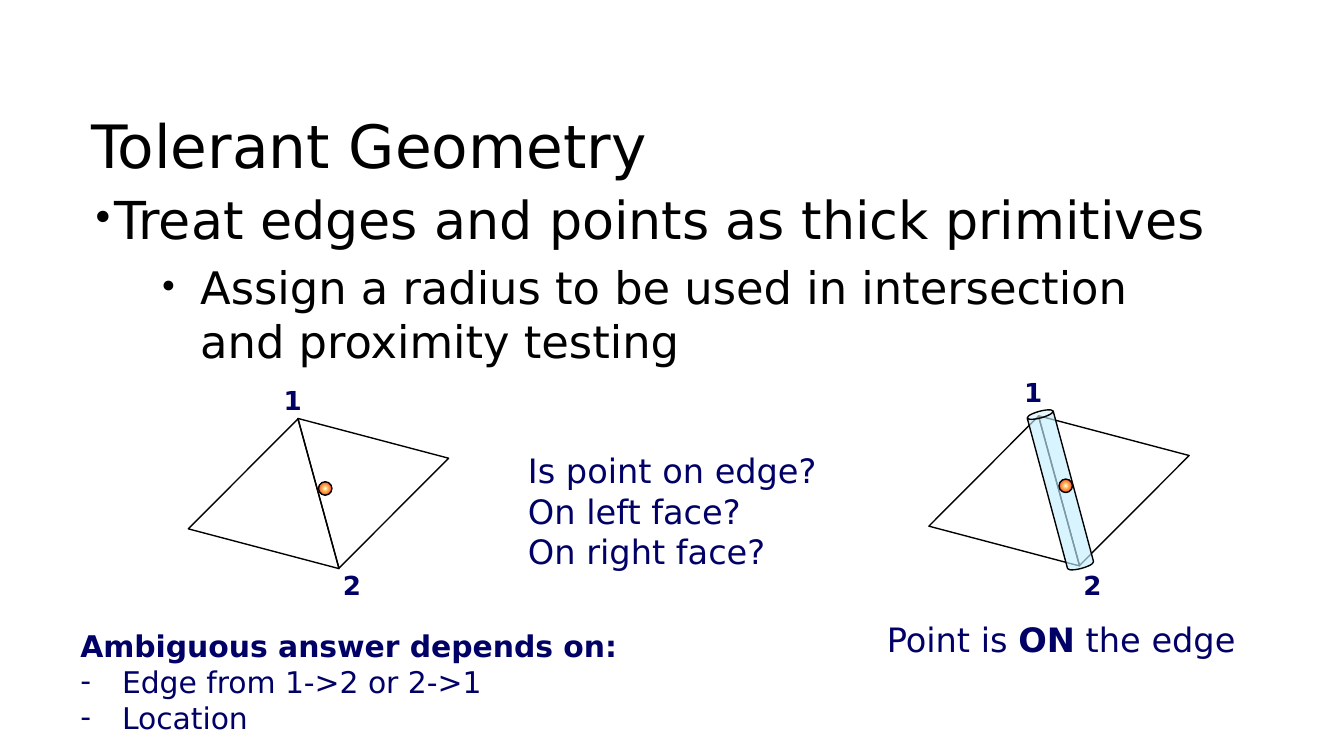
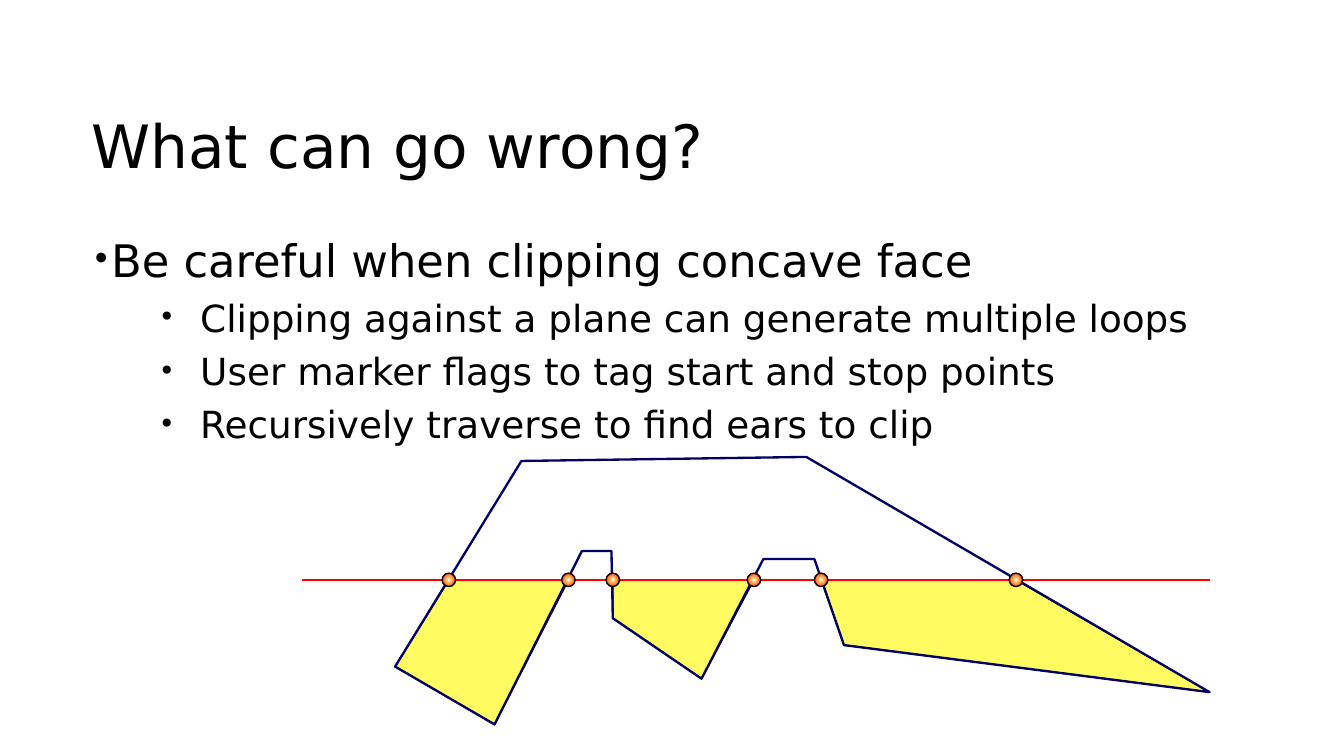
from lxml import etree
from pptx import Presentation, util as u
from pptx.dml import color
from pptx.enum import shapes, text
from pptx.oxml import ns

FONT = "DejaVu Sans"
BLACK, NAVY, RED, YELLOW, CYAN = "000000", "000066", "FF0000", "FFFB61", "C2F0FF"
COLUMNS, ROWS = 100, 56.25
TITLE_BOX = (5.8, 7.3, 88.3, 8.5)
DOT = 1.0


def cells(count):
    """Return the length of a number of grid cells, each a tenth of an inch."""
    return u.Inches(count / 10)


def hue(value):
    """Turn a hex string into a colour."""
    return color.RGBColor.from_string(value)


def add_xml(parent, tag, **attributes):
    """Append a drawing element with attributes to a parent."""
    child = etree.SubElement(parent, ns.qn(f"a:{tag}"))
    for name, value in attributes.items():
        child.set(name, str(value))
    return child


def style_font(target, size, tint, bold=None):
    """Format the font of a paragraph or span."""
    target.font.name = FONT
    target.font.size = u.Pt(size)
    target.font.color.rgb = hue(tint)
    target.font.bold = bold


def add_bullet(para, mark, margin, indent, tint=None, percent=None):
    """Give a paragraph a bullet and a hanging indent in grid cells."""
    props = para._p.get_or_add_pPr()
    props.set("marL", str(cells(margin)))
    props.set("indent", str(cells(indent)))
    if tint:
        add_xml(add_xml(props, "buClr"), "srgbClr", val=tint)
    if percent:
        add_xml(props, "buSzPct", val=percent * 1000)
    add_xml(props, "buFont", typeface=FONT)
    add_xml(props, "buChar", char=mark)


def place(shape, box):
    """Move a shape to a box given in grid cells."""
    shape.left, shape.top, shape.width, shape.height = map(cells, box)


def prepare_placeholder(shape, box):
    """Place a placeholder and return its text frame."""
    place(shape, box)
    frame = shape.text_frame
    frame.word_wrap = True
    frame.auto_size = text.MSO_AUTO_SIZE.NONE
    frame.vertical_anchor = text.MSO_ANCHOR.TOP
    frame.margin_left = frame.margin_right = cells(1)
    frame.margin_top = cells(0.8)
    return frame


def add_page(deck, title, body_box, lead_size, lead, points):
    """Add a page with a title and a two-level list."""
    page = deck.slides.add_slide(deck.slide_layouts[1])
    para = prepare_placeholder(page.shapes.title, TITLE_BOX).paragraphs[0]
    para.text = title
    para.alignment = text.PP_ALIGN.LEFT
    style_font(para, 32, BLACK)

    frame = prepare_placeholder(page.placeholders[1], body_box)
    for index, line in enumerate([lead, *points]):
        para = frame.add_paragraph() if index else frame.paragraphs[0]
        para.text = line
        size = lead_size - 4 if index else lead_size
        para.level = 1 if index else 0
        para.space_before = u.Pt(0.23 * size if index else 0)
        margin, indent = (8.1, -3.1) if index else (0, 0)
        add_bullet(para, "•", margin, indent, BLACK, 75)
        style_font(para, size, BLACK)
    return page


def add_note(parent, box, lines, size, bold=None, align=text.PP_ALIGN.LEFT):
    """Add a navy text box that does not wrap and return its paragraphs."""
    shape = parent.add_textbox(*map(cells, box))
    frame = shape.text_frame
    frame.word_wrap = False
    frame.auto_size = text.MSO_AUTO_SIZE.SHAPE_TO_FIT_TEXT
    for index, line in enumerate(lines):
        para = frame.add_paragraph() if index else frame.paragraphs[0]
        para.text = line
        para.alignment = align
        style_font(para, size, NAVY, bold)
    return frame.paragraphs


def outline_shape(shape, tint=BLACK, width=0, fill=None):
    """Set the line and fill of a shape and remove its shadow."""
    shape.shadow.inherit = False
    shape.line.color.rgb = hue(tint)
    shape.line.width = u.Pt(width)
    if fill:
        shape.fill.solid()
        shape.fill.fore_color.rgb = hue(fill)
    else:
        shape.fill.background()
    return shape


def add_figure(parent, kind, box, rotation=0, fill=None):
    """Add a thinly outlined preset shape."""
    shape = parent.add_shape(kind, *map(cells, box))
    shape.rotation = rotation
    return outline_shape(shape, fill=fill)


def add_dot(parent, left, top):
    """Add a glowing point marker."""
    dot = add_figure(parent, shapes.MSO_SHAPE.OVAL, (left, top, DOT, DOT))
    props = dot._element.spPr
    gradient = add_xml(props, "gradFill", rotWithShape=1)
    stops = add_xml(gradient, "gsLst")
    for position, tint in ((1, "FFFFFF"), (21, "FFCC66"), (100, RED)):
        stop = add_xml(stops, "gs", pos=position * 1000)
        add_xml(stop, "srgbClr", val=tint)
    focus = add_xml(gradient, "path", path="circle")
    add_xml(focus, "fillToRect", l=50000, t=50000, r=50000, b=50000)
    props.replace(props.find(ns.qn("a:noFill")), gradient)


def add_mesh(page, left, top, label_tops, thick=False):
    """Draw two faces that share an edge, with a point on that edge."""
    group = page.shapes.add_group_shape().shapes
    triangle = shapes.MSO_SHAPE.ISOSCELES_TRIANGLE
    add_figure(group, triangle, (left, top, 11.6, 10), 14.8)
    lower = add_figure(group, triangle, (left + 5.6, top + 1.45, 11.6, 10), 14.8)
    lower._element.spPr.xfrm.set("flipV", "1")
    for label, shift, label_top in zip("21", (9.35, 4.95), label_tops):
        box = (left + shift, label_top, 3.4, 3.4)
        add_note(group, box, [label], 14, True, text.PP_ALIGN.RIGHT)
    if thick:
        box = (left + 7.7, top - 0.4, 2, 12.1)
        tube = add_figure(group, shapes.MSO_SHAPE.CAN, box, 345, CYAN)
        tint = tube._element.spPr.find(f".//{ns.qn('a:srgbClr')}")
        add_xml(tint, "alpha", val=64000)
    add_dot(group, left + 8.6, top + 4.85)


def add_polygon(page, left, top, points, **style):
    """Draw a closed outline from points relative to a corner."""
    start, *rest = [(cells(left + x), cells(top + y)) for x, y in points]
    builder = page.shapes.build_freeform(*start)
    builder.add_line_segments(rest, close=True)
    return outline_shape(builder.convert_to_shape(), **style)


def add_clipping(page, left, top, width):
    """Draw a concave face cut by a line, with its ears filled."""
    cut = 9.15
    face = [(14.3, 19.9), (6.9, 15.6), (16.3, 0.3), (37.5, 0),
            (67.5, 17.5), (40.3, 14), (38.1, 7.6), (34.3, 7.6),
            (29.7, 16.5), (23.1, 12), (23, 7), (20.8, 7)]
    ears = [(10.9, 19.8), (38.6, 53.1), (23.1, 33.6)]
    low = [point for point in face if point[1] > cut]
    for index, (start, end) in enumerate(ears):
        tips = low[2 * index:2 * index + 2]
        points = [(start, cut), (end, cut), *tips]
        add_polygon(page, left, top, points, fill=YELLOW)
    add_polygon(page, left, top, face, tint=NAVY, width=1.25)

    height = cells(top + cut)
    line = page.shapes.add_connector(
        shapes.MSO_CONNECTOR.STRAIGHT, cells(left), height, cells(left + width), height)
    line.line.color.rgb = hue(RED)
    line.line.width = u.Pt(1.25)
    add_xml(line._element.spPr, "effectLst")
    for crossing in sorted(sum(ears, ())):
        add_dot(page.shapes, left + crossing - DOT / 2, top + cut - DOT / 2)


def add_verdict(page, box):
    """State the result with one bold word."""
    para = add_note(page.shapes, box, [""], 18)[0]
    for words, bold in (("Point is ", False), ("ON", True), (" the edge", False)):
        span = para.add_run()
        span.text = words
        span.font.bold = bold


def add_causes(page, box):
    """List what the ambiguous answer depends on."""
    lines = ["Ambiguous answer depends on:", "Edge from 1->2 or 2->1", "Location"]
    shape = page.shapes.add_textbox(*map(cells, box))
    frame = shape.text_frame
    frame.word_wrap = False
    frame.auto_size = text.MSO_AUTO_SIZE.SHAPE_TO_FIT_TEXT
    for index, line in enumerate(lines):
        para = frame.add_paragraph() if index else frame.paragraphs[0]
        para.text = line
        if index:
            add_bullet(para, "-", 3.1, -3.1)
        style_font(para, 16, NAVY, index == 0)


def build_tolerance(deck):
    """Build the page on tolerant geometry."""
    page = add_page(
        deck, "Tolerant Geometry", (5.8, 13.1, 88.3, 16.6), 28,
        "Treat edges and points as thick primitives",
        ["Assign a radius to be used in intersection\vand proximity testing"])
    add_mesh(page, 15.1, 31, (41.9, 28.1))
    questions = ["Is point on edge?", "On left face?", "On right face?"]
    add_note(page.shapes, (38.3, 33, 24.2, 10.1), questions, 18)
    add_mesh(page, 70.2, 30.8, (41.9, 27.5), thick=True)
    add_verdict(page, (65, 45.6, 28.4, 4))
    add_causes(page, (5, 46.2, 42.4, 9.1))


def build_clipping(deck):
    """Build the page on clipping concave faces."""
    page = add_page(
        deck, "What can go wrong?", (5.8, 16.5, 88.3, 19.2), 24,
        "Be careful when clipping concave face",
        ["Clipping against a plane can generate multiple loops",
         "User marker flags to tag start and stop points",
         "Recursively traverse to find ears to clip"])
    add_clipping(page, 22.5, 34, 67.5)


def main():
    """Build and save the deck."""
    deck = Presentation()
    deck.slide_width, deck.slide_height = cells(COLUMNS), cells(ROWS)
    build_tolerance(deck)
    build_clipping(deck)
    deck.save("out.pptx")


if __name__ == "__main__":
    main()
